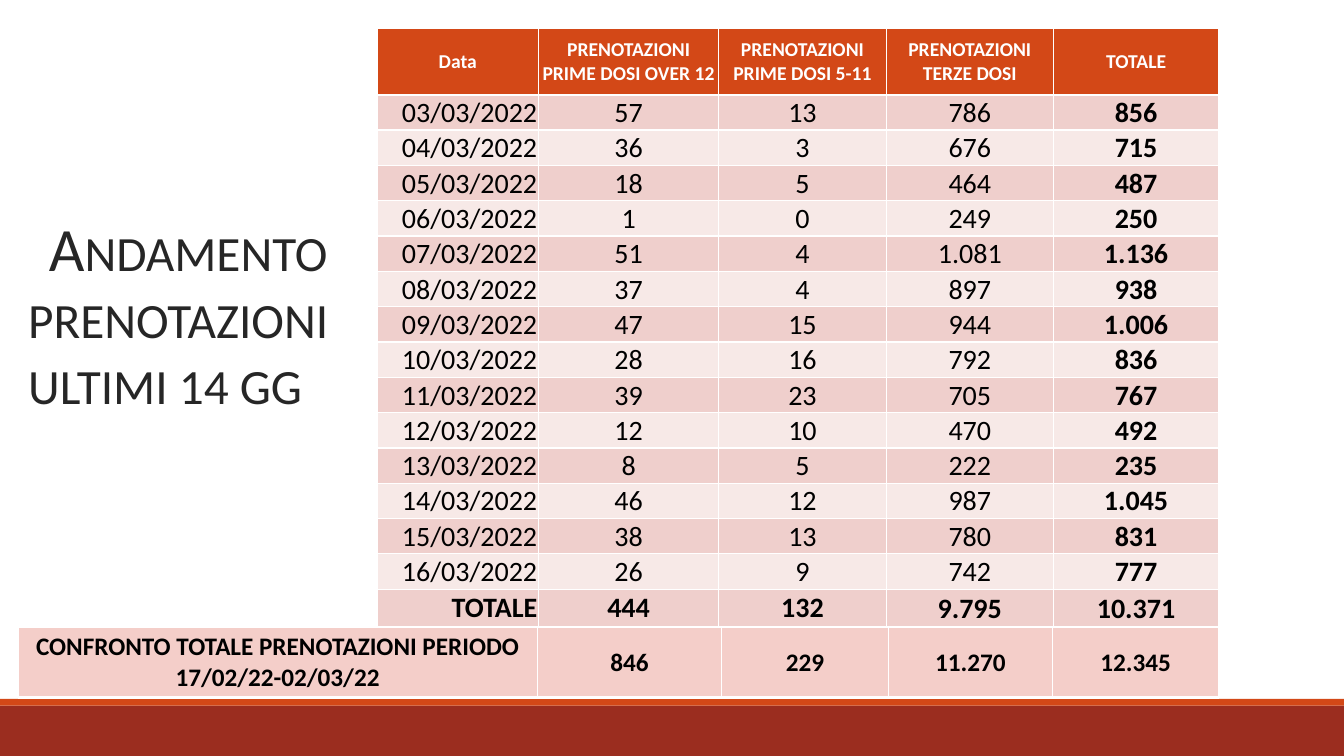
from lxml.etree import SubElement
from pptx import Presentation
from pptx.dml.color import RGBColor
from pptx.enum.shapes import MSO_SHAPE
from pptx.enum.text import MSO_ANCHOR, MSO_AUTO_SIZE, PP_ALIGN
from pptx.oxml.ns import qn
from pptx.util import Inches, Pt

COLORS = {
    "white": "FFFFFF",
    "black": "000000",
    "title": "262626",
    "orange": "D34817",
    "brick": "9B2D1F",
    "band_dark": "EFCFCC",
    "band_light": "F7E9E7",
    "compare": "F4CEC9",
}
HEADERS = ["Data", "PRENOTAZIONI PRIME DOSI OVER 12", "PRENOTAZIONI PRIME DOSI 5-11",
           "PRENOTAZIONI TERZE DOSI", "TOTALE"]
BOOKINGS = [
    (57, 13, 786), (36, 3, 676), (18, 5, 464), (1, 0, 249), (51, 4, 1081),
    (37, 4, 897), (47, 15, 944), (28, 16, 792), (39, 23, 705), (12, 10, 470),
    (8, 5, 222), (46, 12, 987), (38, 13, 780), (26, 9, 742),
]
PREVIOUS = (846, 229, 11270)
FIRST_DAY = 3


def rgb(name):
    return RGBColor.from_string(COLORS[name])


def number(n):
    return f"{n:,}".replace(",", ".")


def with_total(counts):
    return [number(n) for n in (*counts, sum(counts))]


def write(tf, text, size=20, color="black", bold=False, align=PP_ALIGN.CENTER,
          anchor=MSO_ANCHOR.MIDDLE, font="Calibri"):
    tf.text = text
    for p in tf.paragraphs:
        p.alignment = align
        for r in p.runs:
            r.font.name = font
            r.font.size = Pt(size)
            r.font.bold = bold
            r.font.color.rgb = rgb(color)
    return anchor


class Deck:
    def __init__(self):
        self.prs = Presentation()
        self.prs.slide_width = Inches(13.333)
        self.prs.slide_height = Inches(7.5)
        self.s = self.prs.slides.add_slide(self.prs.slide_layouts[5])

    def x(self, percent):
        return round(self.prs.slide_width * percent / 100)

    def y(self, percent):
        return round(self.prs.slide_height * percent / 100)

    def box(self, left, top, width, height):
        return self.x(left), self.y(top), self.x(width), self.y(height)

    def bar(self, top, height, color):
        sp = self.s.shapes.add_shape(MSO_SHAPE.RECTANGLE, *self.box(0, top, 100, height))
        sp.shadow.inherit = False
        sp.fill.solid()
        sp.fill.fore_color.rgb = rgb(color)
        sp.line.fill.background()

    def title(self, text, *place):
        sp = self.s.shapes.title
        sp.left, sp.top, sp.width, sp.height = self.box(*place)
        tf = sp.text_frame
        tf.word_wrap = True
        tf.auto_size = MSO_AUTO_SIZE.NONE
        tf.margin_left = tf.margin_right = 0
        tf.margin_top = tf.margin_bottom = Inches(0.05)
        tf.vertical_anchor = write(tf, text, size=44, color="title",
                                   align=PP_ALIGN.LEFT, anchor=MSO_ANCHOR.TOP)
        p = tf.paragraphs[0]
        p.line_spacing = 0.9
        p.space_before, p.space_after = Pt(12), Pt(2)
        p.runs[0].font._element.set("cap", "small")
        pPr = p._p.get_or_add_pPr()
        pPr.set("marL", str(Inches(0.1)))
        pPr.set("indent", str(Inches(-0.1)))
        SubElement(pPr, qn("a:buChar")).set("char", " ")

    def table(self, left, top, cols, rows):
        frame = self.s.shapes.add_table(len(rows), len(cols),
                                        *self.box(left, top, sum(cols), sum(rows)))
        tbl = frame.table
        tbl.first_row = tbl.horz_banding = False
        for col, width in zip(tbl.columns, cols):
            col.width = self.x(width)
        for row, height in zip(tbl.rows, rows):
            row.height = self.y(height)
        return tbl

    def cell(self, c, text, fill, top=1, bottom=1, inset=0.01, **fmt):
        c.margin_left = c.margin_right = Inches(inset)
        c.margin_top, c.margin_bottom = Inches(0.01), 0
        c.vertical_anchor = write(c.text_frame, text, **fmt)
        tcPr = c._tc.get_or_add_tcPr()
        for side, width in zip("LRTB", (1, 1, top, bottom)):
            ln = SubElement(tcPr, qn(f"a:ln{side}"), w=str(Pt(width)))
            SubElement(SubElement(ln, qn("a:solidFill")), qn("a:srgbClr"), val=COLORS["white"])
        c.fill.solid()
        c.fill.fore_color.rgb = rgb(fill)


def main():
    deck = Deck()
    deck.bar(93.33, 6.67, "brick")
    deck.bar(92.45, 0.88, "orange")
    deck.title("Andamento prenotazioni ultimi 14 gg", 1.35, 28.27, 24.6, 52.67)

    daily = deck.table(28.06, 3.73, [12, 13.43, 12.45, 12.45, 12.3],
                       [8.8] + [4.55] * len(BOOKINGS) + [4.93])
    for c, text in zip(daily.rows[0].cells, HEADERS):
        deck.cell(c, text, "orange", bottom=1.5, size=14, color="white", bold=True)

    lines = [[f"{day:02}/03/2022", *with_total(counts)]
             for day, counts in enumerate(BOOKINGS, FIRST_DAY)]
    lines.append(["TOTALE", *with_total([sum(col) for col in zip(*BOOKINGS)])])
    for i, line in enumerate(lines, 1):
        last_row = i == len(lines)
        for j, text in enumerate(line):
            low = j == 4 or (last_row and j == 3)
            deck.cell(daily.cell(i, j), text, "band_dark" if i % 2 else "band_light",
                      top=1.5 if i == 1 else 1, bold=last_row or j == 4,
                      align=PP_ALIGN.CENTER if j else PP_ALIGN.RIGHT,
                      anchor=MSO_ANCHOR.BOTTOM if low else MSO_ANCHOR.MIDDLE)

    compare = deck.table(1.35, 82.93, [38.63, 13.73, 12.38, 12.23, 12.38], [9.33])
    label = "CONFRONTO TOTALE PRENOTAZIONI PERIODO\n17/02/22-02/03/22"
    for j, text in enumerate([label, *with_total(PREVIOUS)]):
        deck.cell(compare.cell(0, j), text, "compare", bottom=3,
                  inset=0.01 if j else 0.1, size=18, bold=True)

    deck.prs.save("out.pptx")


if __name__ == "__main__":
    main()
